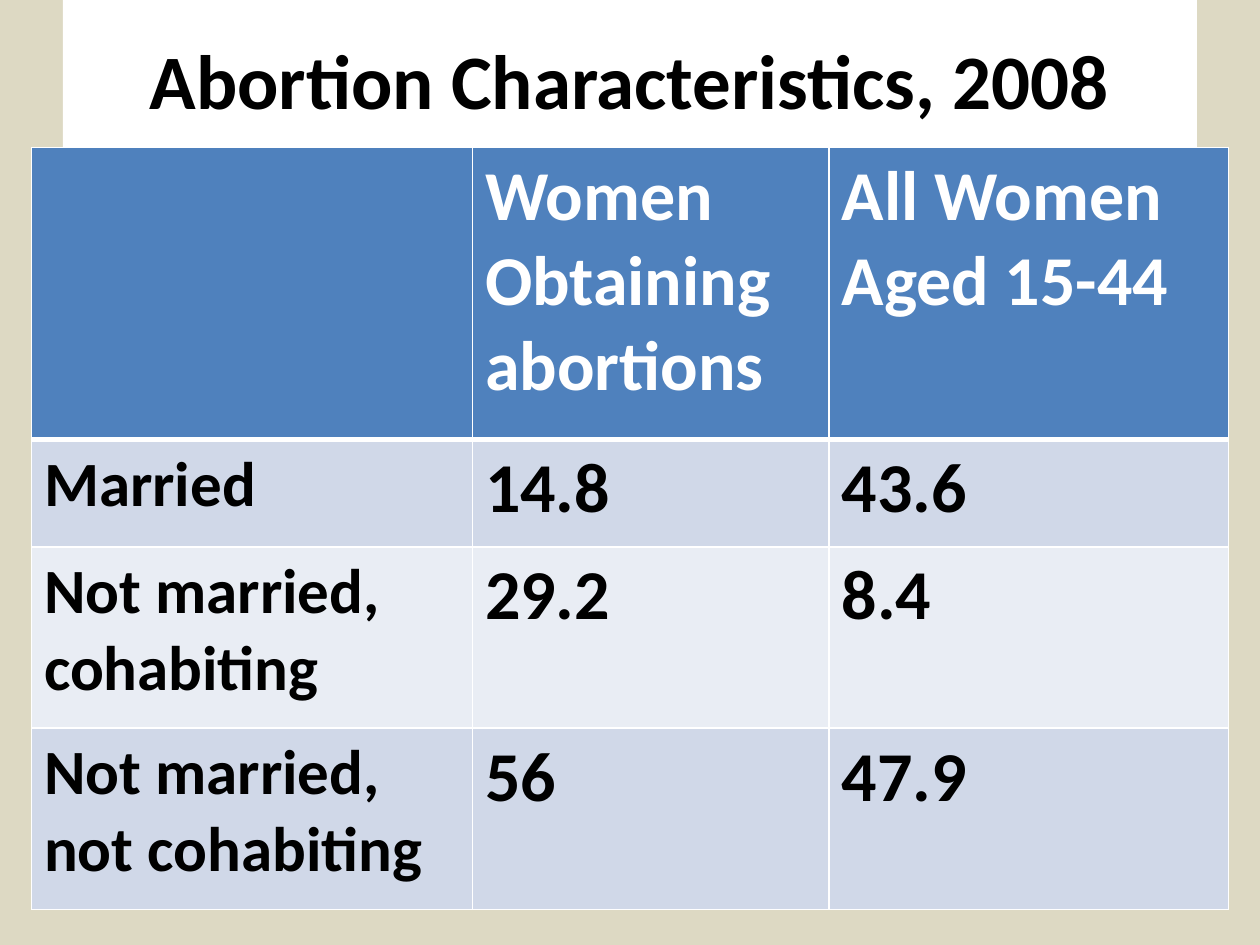
from lxml.etree import SubElement
from pptx import Presentation
from pptx.dml.color import RGBColor
from pptx.enum.shapes import MSO_SHAPE
from pptx.enum.text import MSO_ANCHOR, PP_ALIGN
from pptx.oxml.ns import qn
from pptx.util import Inches, Pt

HUES = {
    "page": "DDD9C3",
    "white": "FFFFFF",
    "black": "000000",
    "head": "4F81BD",
    "odd": "D0D8E8",
    "even": "E9EDF4",
}
COLS = [3.5, 2.83, 3.17]
ROWS = [2.32, 0.85, 1.44, 1.44]
DATA = [
    ["", "Women Obtaining abortions", "All Women Aged 15-44"],
    ["Married", "14.8", "43.6"],
    ["Not married, cohabiting", "29.2", "8.4"],
    ["Not married, not cohabiting", "56", "47.9"],
]


def paint(fill, hue):
    fill.solid()
    fill.fore_color.rgb = RGBColor.from_string(HUES[hue])


def write(frame, text, size=40, hue="black", align=PP_ALIGN.LEFT):
    frame.word_wrap = True
    par = frame.paragraphs[0]
    par.alignment = align
    run = par.add_run()
    run.text = text
    font = run.font
    font.name, font.size, font.bold = "Calibri", Pt(size), True
    font.color.rgb = RGBColor.from_string(HUES[hue])


def edge(cell, side, width):
    line = SubElement(cell._tc.get_or_add_tcPr(), qn(f"a:ln{side}"), w=str(Pt(width)))
    fill = SubElement(line, qn("a:solidFill"))
    SubElement(fill, qn("a:srgbClr"), val=HUES["white"])


def add_title(slide, left, top, width, height):
    box = slide.shapes.add_shape(
        MSO_SHAPE.RECTANGLE, Inches(left), Inches(top), Inches(width), Inches(height))
    box.shadow.inherit = False
    paint(box.fill, "white")
    box.line.fill.background()
    box.text_frame.vertical_anchor = MSO_ANCHOR.MIDDLE
    write(box.text_frame, "Abortion Characteristics, 2008", size=44,
          align=PP_ALIGN.CENTER)


def add_grid(slide, left, top, width, height):
    grid = slide.shapes.add_table(
        len(ROWS), len(COLS), Inches(left), Inches(top),
        Inches(width), Inches(height)).table
    for col, size in zip(grid.columns, COLS):
        col.width = Inches(size)
    for row, size in zip(grid.rows, ROWS):
        row.height = Inches(size)

    for r, row in enumerate(DATA):
        band = "head" if r == 0 else "odd" if r % 2 else "even"
        for c, text in enumerate(row):
            cell = grid.cell(r, c)
            # Borders come before the fill; the header has a heavy rule below
            for side in "LRTB":
                heavy = (r == 0 and side == "B") or (r == 1 and side == "T")
                edge(cell, side, 3 if heavy else 1)
            paint(cell.fill, band)
            if text:
                write(cell.text_frame, text, size=36 if c == 0 else 40,
                      hue="white" if r == 0 else "black")


def main():
    deck = Presentation()
    deck.slide_width, deck.slide_height = Inches(10), Inches(7.5)
    slide = deck.slides.add_slide(deck.slide_layouts[6])
    paint(slide.background.fill, "page")
    # Title band, then the table over its lower edge
    add_title(slide, 0.5, 0, 9, 1.25)
    add_grid(slide, 0.25, 1.17, sum(COLS), sum(ROWS))
    deck.save("out.pptx")


if __name__ == "__main__":
    main()
